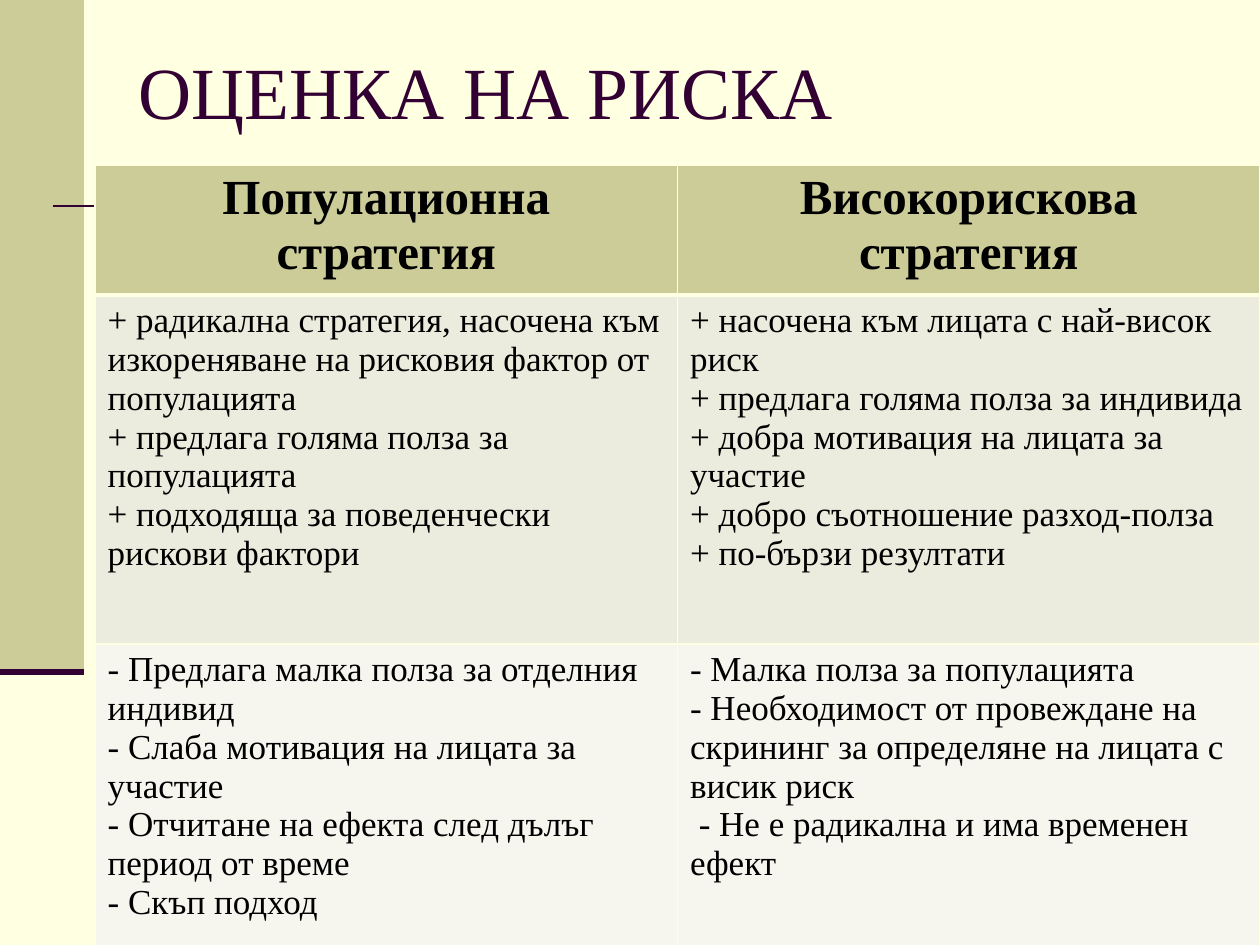
from pptx import Presentation
from pptx.dml.color import RGBColor
from pptx.enum.shapes import MSO_CONNECTOR, MSO_SHAPE
from pptx.enum.text import MSO_ANCHOR, MSO_AUTO_SIZE, PP_ALIGN
from pptx.oxml import parse_xml
from pptx.oxml.ns import nsdecls
from pptx.oxml.xmlchemy import OxmlElement
from pptx.util import Pt

# Content
TITLE = "ОЦЕНКА НА РИСКА"
STRATEGIES = [
    {
        "name": "Популационна стратегия",
        "pros": [
            "+ радикална стратегия, насочена към изкореняване на рисковия фактор от популацията",
            "+ предлага голяма полза за популацията",
            "+ подходяща за поведенчески рискови фактори",
        ],
        "cons": [
            "- Предлага малка полза за отделния индивид",
            "- Слаба мотивация на лицата за участие",
            "- Отчитане на ефекта след дълъг период от време",
            "- Скъп подход",
        ],
    },
    {
        "name": "Високорискова стратегия",
        "pros": [
            "+ насочена към лицата с най-висок риск",
            "+ предлага голяма полза за индивида",
            "+ добра мотивация на лицата за участие",
            "+ добро съотношение разход-полза",
            "+ по-бързи резултати",
        ],
        "cons": [
            "- Малка полза за популацията",
            "- Необходимост от провеждане на скрининг за определяне на лицата с висик риск",
            " - Не е радикална и има временен ефект",
        ],
    },
]

# Look
CREAM = RGBColor(0xFF, 0xFF, 0xE1)
OLIVE = RGBColor(0xCC, 0xCC, 0x99)
PLUM = RGBColor(0x33, 0x00, 0x33)
BLACK = RGBColor(0x00, 0x00, 0x00)
PROS_FILL = RGBColor(0xEC, 0xEC, 0xDE)
CONS_FILL = RGBColor(0xF6, 0xF6, 0xEF)
FONT = "Times New Roman"
HEAD_TEXT = {"name": FONT, "size": Pt(28), "bold": True}
BODY_TEXT = {"name": FONT, "size": Pt(20), "bold": False}
TITLE_TEXT = {"name": FONT, "size": Pt(42), "bold": False}

# Row key, height in px, fill, text format, alignment, lower border in points
ROWS = [
    ("name", 130, OLIVE, HEAD_TEXT, PP_ALIGN.CENTER, 3),
    ("pros", 349, PROS_FILL, BODY_TEXT, PP_ALIGN.LEFT, 1),
    ("cons", 306, CONS_FILL, BODY_TEXT, PP_ALIGN.LEFT, 1),
]

# Lengths in px
PX = 914400 // 126
SLIDE_W, SLIDE_H = 1260, 945
BAND_W, BAND_H = 84, 672
TABLE_X, TABLE_Y = 95, 165
RULES = [((53, 206), (1197, 206), 1.5), ((0, BAND_H), (BAND_W, BAND_H), 3.5)]


def emu(*lengths):
    return [length * PX for length in lengths]


def format_font(font, values, color):
    for key, value in values.items():
        setattr(font, key, value)
    font.color.rgb = color


def add_rule(slide, start, end, width):
    rule = slide.shapes.add_connector(MSO_CONNECTOR.STRAIGHT, *emu(*start, *end))
    rule.line.color.rgb = PLUM
    rule.line.width = Pt(width)
    rule._element.spPr.append(OxmlElement("a:effectLst"))


def set_borders(cell, widths):
    properties = cell._tc.get_or_add_tcPr()
    for index, (side, points) in enumerate(widths.items()):
        properties.insert(index, parse_xml(
            f'<a:ln{side} {nsdecls("a")} w="{Pt(points)}"><a:solidFill>'
            f'<a:srgbClr val="{CREAM}"/></a:solidFill></a:ln{side}>'))


def fill_cell(cell, lines, fill, text_format, alignment):
    cell.fill.solid()
    cell.fill.fore_color.rgb = fill
    cell.text = "\n".join(lines)
    for paragraph in cell.text_frame.paragraphs:
        paragraph.alignment = alignment
        format_font(paragraph.runs[0].font, text_format, BLACK)


def main():
    deck = Presentation()
    deck.slide_width, deck.slide_height = emu(SLIDE_W, SLIDE_H)
    slide = deck.slides.add_slide(deck.slide_layouts[5])
    slide.background.fill.solid()
    slide.background.fill.fore_color.rgb = CREAM

    # Side band and rules
    band = slide.shapes.add_shape(MSO_SHAPE.RECTANGLE, *emu(0, 0, BAND_W, BAND_H))
    band.shadow.inherit = False
    band.fill.solid()
    band.fill.fore_color.rgb = OLIVE
    band.line.fill.background()
    for start, end, width in RULES:
        add_rule(slide, start, end, width)

    # Title
    title = slide.shapes.title
    title.left, title.top, title.width, title.height = emu(126, 26, 1071, 129)
    title.text_frame.text = TITLE
    title.text_frame.auto_size = MSO_AUTO_SIZE.NONE
    title.text_frame.vertical_anchor = MSO_ANCHOR.MIDDLE
    heading = title.text_frame.paragraphs[0]
    heading.alignment = PP_ALIGN.LEFT
    format_font(heading.runs[0].font, TITLE_TEXT, PLUM)

    # Comparison table: one column per strategy
    table_w = SLIDE_W - TABLE_X
    table_h = sum(row[1] for row in ROWS)
    table = slide.shapes.add_table(
        len(ROWS), len(STRATEGIES), *emu(TABLE_X, TABLE_Y, table_w, table_h)).table
    upper = 1
    for r, (key, height, fill, text_format, alignment, lower) in enumerate(ROWS):
        table.rows[r].height = height * PX
        for c, strategy in enumerate(STRATEGIES):
            lines = [strategy[key]] if key == "name" else strategy[key]
            cell = table.cell(r, c)
            fill_cell(cell, lines, fill, text_format, alignment)
            set_borders(cell, {"L": 1, "R": 1, "T": upper, "B": lower})
        upper = lower

    deck.save("out.pptx")


if __name__ == "__main__":
    main()
